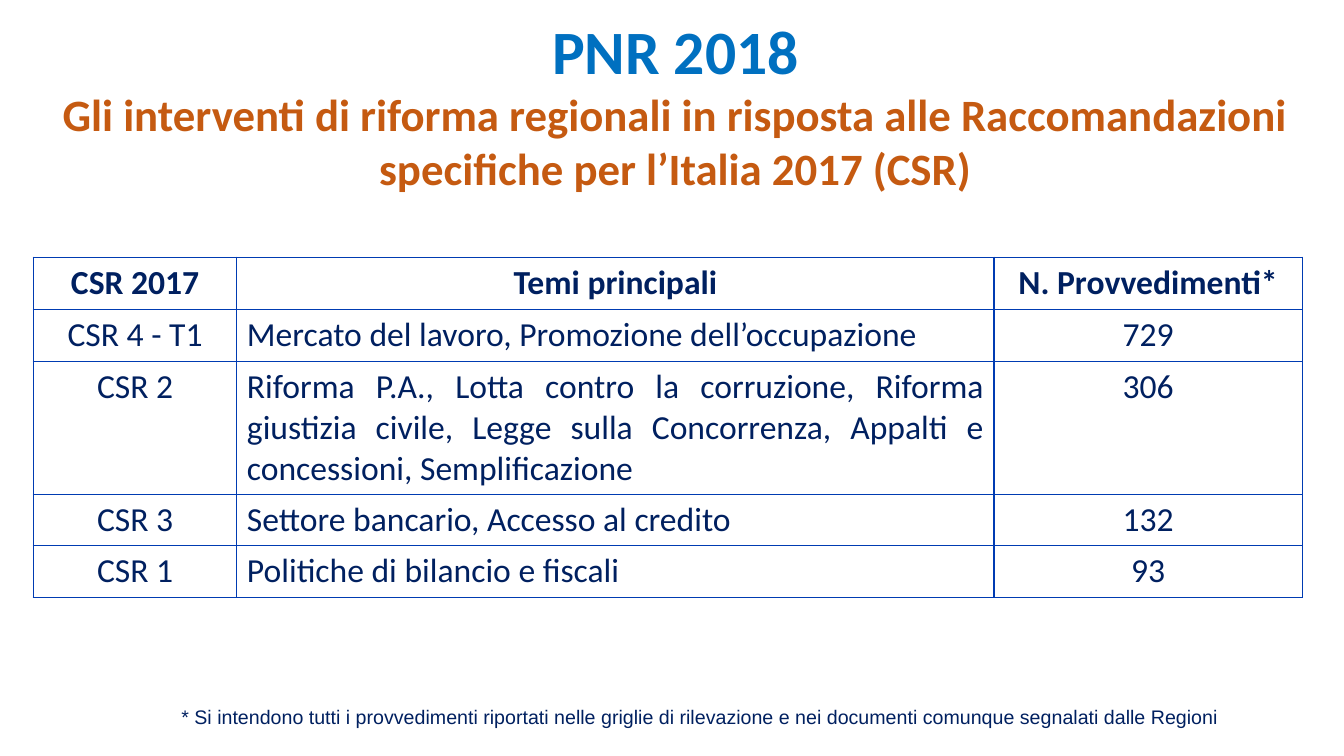
from dataclasses import dataclass

from lxml.etree import SubElement
from pptx import Presentation
from pptx.dml.color import RGBColor
from pptx.enum.text import PP_ALIGN
from pptx.oxml.ns import qn
from pptx.util import Cm, Pt


@dataclass(frozen=True)
class Theme:
    heading_font: str = "Calibri"
    note_font: str = "Arial"
    blue: str = "0070C0"
    orange: str = "C55A11"
    navy: str = "002060"
    border: str = "003BB2"
    title_size: int = 44
    subtitle_size: int = 32
    table_size: int = 24
    note_size: int = 14
    border_width: int = 1


class SlideBuilder:
    def __init__(self, slide, theme):
        self.slide = slide
        self.theme = theme

    def set_text(self, para, text, font, size, color, bold=False, align=PP_ALIGN.LEFT):
        para.text = text
        para.alignment = align
        para.font.name = font
        para.font.size = Pt(size)
        para.font.bold = bold
        para.font.color.rgb = RGBColor.from_string(color)

    def text_frame(self, left, top, width, height):
        box = self.slide.shapes.add_textbox(Cm(left), Cm(top), Cm(width), Cm(height))
        box.text_frame.word_wrap = True
        return box.text_frame

    def heading(self, title, subtitle):
        theme = self.theme
        frame = self.text_frame(0.58, 0.2, 32.89, 4.88)
        self.set_text(frame.paragraphs[0], title, theme.heading_font, theme.title_size,
                      theme.blue, True, PP_ALIGN.CENTER)
        self.set_text(frame.add_paragraph(), subtitle, theme.heading_font, theme.subtitle_size,
                      theme.orange, True, PP_ALIGN.CENTER)

    def footnote(self, text):
        theme = self.theme
        frame = self.text_frame(4.32, 17.65, 27.28, 0.86)
        self.set_text(frame.paragraphs[0], text, theme.note_font, theme.note_size, theme.navy)

    def outline(self, cell):
        """Draw the four borders; they must precede the fill in the cell properties."""
        properties = cell._tc.get_or_add_tcPr()
        for side in ("a:lnL", "a:lnR", "a:lnT", "a:lnB"):
            line = SubElement(properties, qn(side), w=str(Pt(self.theme.border_width)))
            fill = SubElement(line, qn("a:solidFill"))
            SubElement(fill, qn("a:srgbClr"), val=self.theme.border)

    def table(self, left, top, widths, heights, rows, alignments):
        theme = self.theme
        table = self.slide.shapes.add_table(
            len(rows), len(widths), Cm(left), Cm(top), Cm(sum(widths)), Cm(sum(heights))
        ).table
        table.first_row = table.horz_banding = False
        for column, width in zip(table.columns, widths):
            column.width = Cm(width)
        for row, height in zip(table.rows, heights):
            row.height = Cm(height)
        for row_index, (values, row_alignments) in enumerate(zip(rows, alignments)):
            for column_index, (text, align) in enumerate(zip(values, row_alignments)):
                cell = table.cell(row_index, column_index)
                self.outline(cell)
                cell.fill.background()
                self.set_text(cell.text_frame.paragraphs[0], text, theme.heading_font,
                              theme.table_size, theme.navy, row_index == 0, align)


def main():
    deck = Presentation()
    deck.slide_width, deck.slide_height = Cm(33.87), Cm(19.05)
    page = SlideBuilder(deck.slides.add_slide(deck.slide_layouts[6]), Theme())

    rows = [
        ("CSR 2017", "Temi principali", "N. Provvedimenti*"),
        ("CSR 4 - T1", "Mercato del lavoro, Promozione dell’occupazione", "729"),
        ("CSR 2", "Riforma P.A., Lotta contro la corruzione, Riforma giustizia civile, "
                  "Legge sulla Concorrenza, Appalti e concessioni, Semplificazione", "306"),
        ("CSR 3", "Settore bancario, Accesso al credito", "132"),
        ("CSR 1", "Politiche di bilancio e fiscali", "93"),
    ]
    topic_alignments = (PP_ALIGN.CENTER, PP_ALIGN.LEFT, PP_ALIGN.JUSTIFY,
                        PP_ALIGN.LEFT, PP_ALIGN.LEFT)
    alignments = [(PP_ALIGN.CENTER, topic, PP_ALIGN.CENTER) for topic in topic_alignments]

    page.table(0.84, 6.48, (5.13, 19.08, 7.77), (1.32, 1.3, 3.35, 1.3, 1.3), rows, alignments)
    page.heading("PNR 2018", "Gli interventi di riforma regionali in risposta alle "
                             "Raccomandazioni specifiche per l’Italia 2017 (CSR)")
    page.footnote("* Si intendono tutti i provvedimenti riportati nelle griglie di rilevazione "
                  "e nei documenti comunque segnalati dalle Regioni")
    deck.save("out.pptx")


if __name__ == "__main__":
    main()
